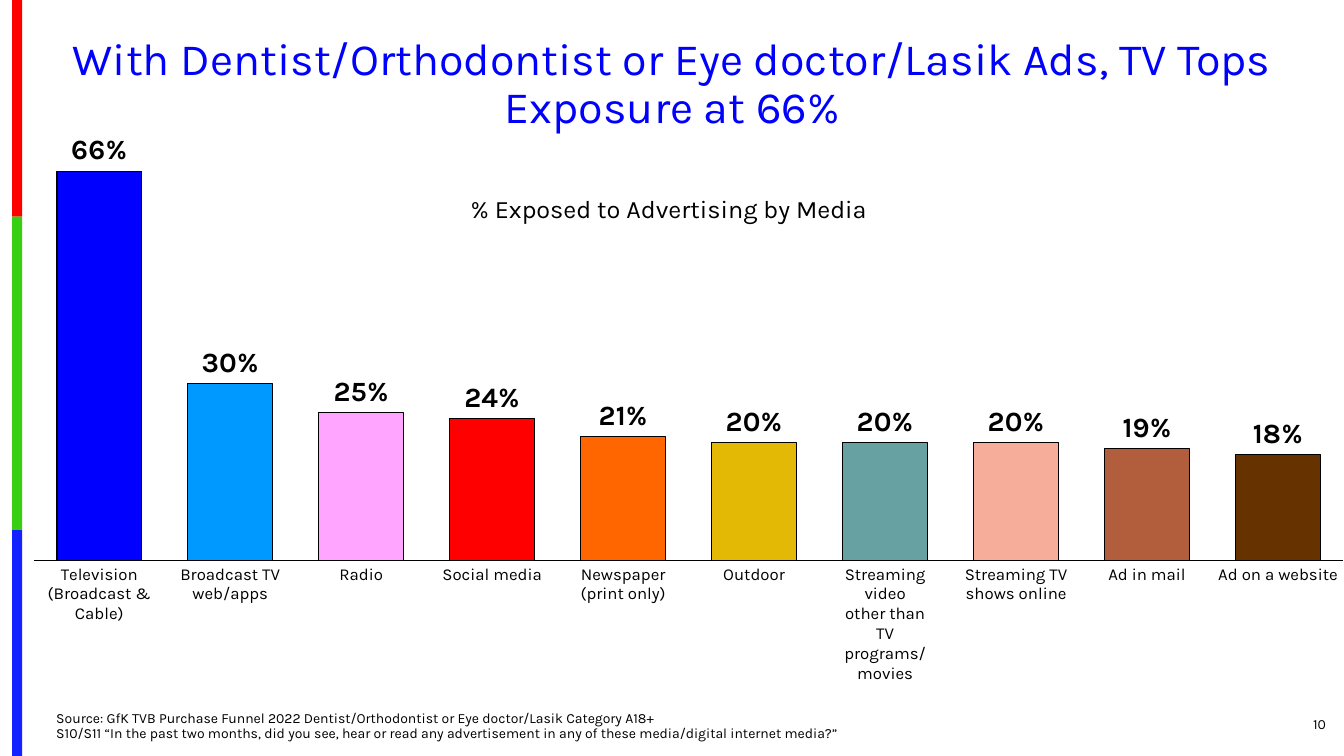
from dataclasses import dataclass

from lxml import etree
from pptx import Presentation
from pptx import util as u
from pptx.chart.data import CategoryChartData
from pptx.dml.color import RGBColor
from pptx.enum import chart as ch
from pptx.enum import shapes, text
from pptx.oxml import parse_xml
from pptx.oxml.ns import nsdecls, qn

SCALE = 9144


def px(n):
    return u.Emu(n * SCALE)


@dataclass
class Theme:
    font: str = "Karla"
    ink: str = "000000"
    blue: str = "0000FF"
    head: int = 32
    sub: int = 18
    label: int = 20
    axis: int = 12
    small: int = 10


MEDIA = [
    ("Television\n(Broadcast & Cable)", 0.66, "0000FF"),
    ("Broadcast TV web/apps", 0.30, "0099FF"),
    ("Radio", 0.25, "FFA4FF"),
    ("Social media", 0.24, "FF0000"),
    ("Newspaper\n(print only)", 0.21, "FF6600"),
    ("Outdoor", 0.20, "E3B905"),
    ("Streaming video\nother than\nTV programs/movies", 0.20, "67A1A1"),
    ("Streaming TV\nshows online", 0.20, "F6AD99"),
    ("Ad in mail", 0.19, "B25E3C"),
    ("Ad on a website", 0.18, "663200"),
]
STRIPES = [(0, 215, "FE0000"), (215, 526, "36CF12"), (526, 750, "1322FE")]
SOURCE = [
    "Source: GfK TVB Purchase Funnel 2022 Dentist/Orthodontist or Eye doctor/Lasik Category A18+",
    "S10/S11 “In the past two months, did you see, hear or read any advertisement in any of these media/digital internet media?”",
]


class Deck:
    def __init__(self, theme):
        self.theme = theme
        self.prs = Presentation()
        self.prs.slide_width, self.prs.slide_height = px(1333), px(750)
        self.slide = self.prs.slides.add_slide(self.prs.slide_layouts[5])

    def style(self, font, size, color=None, bold=False):
        font.name = self.theme.font
        font.size = u.Pt(size)
        font.bold = bold
        font.color.rgb = RGBColor.from_string(color or self.theme.ink)

    def fill_text(self, shape, lines, size, align, anchor, color=None, space=None):
        frame = shape.text_frame
        frame.word_wrap = True
        frame.auto_size = text.MSO_AUTO_SIZE.NONE
        frame.vertical_anchor = anchor
        par = frame.paragraphs[0]
        par.alignment = align
        par.line_spacing = space
        for i, line in enumerate(lines):
            if i:
                par.add_line_break()
            run = par.add_run()
            run.text = line
            self.style(run.font, size, color)

    def title(self, box, words):
        shape = self.slide.shapes.title
        shape.left, shape.top, shape.width, shape.height = map(px, box)
        self.fill_text(shape, [words], self.theme.head, text.PP_ALIGN.CENTER,
                       text.MSO_ANCHOR.MIDDLE, self.theme.blue, 0.9)

    def label(self, box, lines, align, anchor, space=None):
        shape = self.slide.shapes.add_textbox(*map(px, box))
        self.fill_text(shape, lines, self.theme.small, align, anchor, space=space)

    def stripe(self, top, end, color):
        shape = self.slide.shapes.add_shape(
            shapes.MSO_SHAPE.RECTANGLE, px(12), px(top), px(10), px(end - top))
        shape.shadow.inherit = False
        shape.fill.solid()
        shape.fill.fore_color.rgb = RGBColor.from_string(color)
        shape.line.fill.background()

    def outline(self, line):
        line.color.rgb = RGBColor.from_string(self.theme.ink)
        line.width = u.Pt(0.75)

    def place(self, host, after, **spots):
        old = host.find(qn("c:layout"))
        if old is not None:
            host.remove(old)
        layout = parse_xml(f"<c:layout {nsdecls('c')}><c:manualLayout/></c:layout>")
        for tag, val in spots.items():
            etree.SubElement(layout[0], qn(f"c:{tag}")).set("val", str(val))
        if after is None:
            host.insert(0, layout)
        else:
            after.addnext(layout)

    def chart(self, box, name, rows):
        data = CategoryChartData(number_format="0%")
        data.categories = [row[0] for row in rows]
        data.add_series("Series 1", [row[1] for row in rows])
        chart = self.slide.shapes.add_chart(
            ch.XL_CHART_TYPE.COLUMN_CLUSTERED, *map(px, box), data).chart
        self.style(chart.font, self.theme.small)
        chart.has_legend = False
        chart.has_title = True
        run = chart.chart_title.text_frame.paragraphs[0].add_run()
        run.text = name
        self.style(run.font, self.theme.sub)
        head = chart.chart_title._element
        self.place(head, head.find(qn("c:tx")),
                   xMode="edge", yMode="edge", x=0.33, y=0.15)
        self.place(chart._chartSpace.chart.plotArea, None,
                   layoutTarget="inner", xMode="edge", yMode="edge",
                   x=0, y=0.08, w=1, h=0.72)
        vals, cats = chart.value_axis, chart.category_axis
        vals.minimum_scale, vals.maximum_scale = 0, 0.7
        vals.has_major_gridlines = False
        vals.visible = False
        cats.major_tick_mark = ch.XL_TICK_MARK.NONE
        self.style(cats.tick_labels.font, self.theme.axis)
        self.outline(cats.format.line)
        plot = chart.plots[0]
        plot.gap_width, plot.overlap = 55, -30
        plot.vary_by_categories = False
        bars = plot.series[0]
        for i, row in enumerate(rows):
            form = bars.points[i].format
            form.fill.solid()
            form.fill.fore_color.rgb = RGBColor.from_string(row[2])
            self.outline(form.line)
        tags = bars.data_labels
        tags.show_value = True
        tags.number_format = "0%"
        tags.number_format_is_linked = False
        tags.position = ch.XL_LABEL_POSITION.OUTSIDE_END
        self.style(tags.font, self.theme.label, bold=True)


def main():
    deck = Deck(Theme())
    for stripe in STRIPES:
        deck.stripe(*stripe)
    deck.title((46, 31, 1242, 107),
               "With Dentist/Orthodontist or Eye doctor/Lasik Ads, TV Tops Exposure at 66%")
    deck.chart((33, 101, 1300, 573), "% Exposed to Advertising by Media", MEDIA)
    deck.label((1217, 698, 108, 40), ["10"],
               text.PP_ALIGN.RIGHT, text.MSO_ANCHOR.MIDDLE)
    deck.label((46, 701, 1063, 40), SOURCE,
               text.PP_ALIGN.LEFT, text.MSO_ANCHOR.BOTTOM, 0.9)
    deck.prs.save("out.pptx")


if __name__ == "__main__":
    main()
